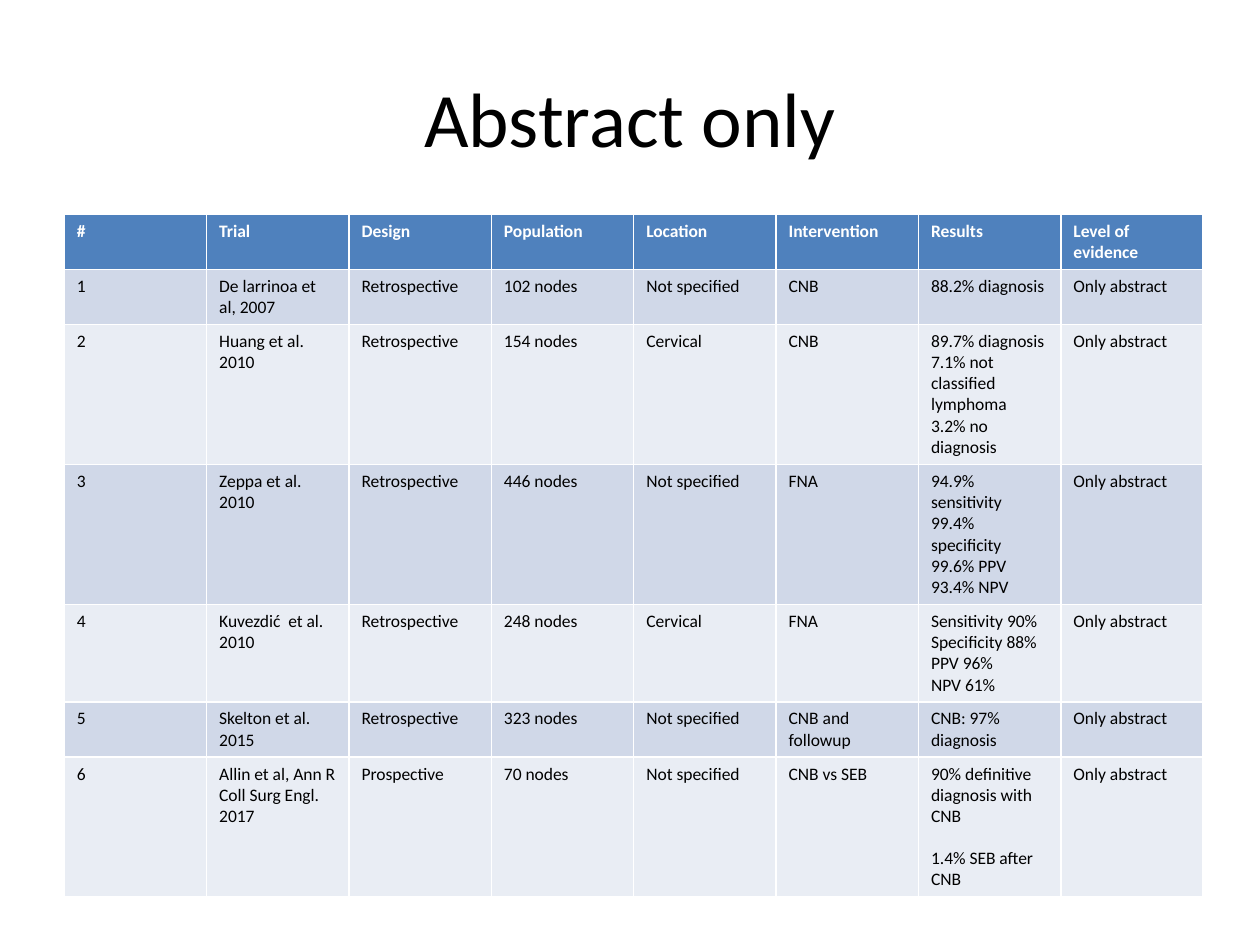
import pptx
import pptx.dml.color
import pptx.enum.text
import pptx.util

Inches = pptx.util.Inches
Pt = pptx.util.Pt
RGBColor = pptx.dml.color.RGBColor

FONT = "Calibri"
BLACK = RGBColor(0x00, 0x00, 0x00)
WHITE = RGBColor(0xFF, 0xFF, 0xFF)
HEADER_BLUE = RGBColor(0x4F, 0x81, 0xBD)
BANDS = (RGBColor(0xD0, 0xD8, 0xE8), RGBColor(0xE9, 0xED, 0xF4))

SLIDE_WIDTH, SLIDE_HEIGHT = Inches(10), Inches(7.5)
COLUMN_WIDTH, ROW_HEIGHT = Inches(1.13), Inches(0.41)
RESULTS_COLUMN = 6

HEADINGS = ("#", "Trial", "Design", "Population", "Location",
            "Intervention", "Results", "Level of evidence")
# Trial, design, population, location, intervention, results
TRIALS = (
    ("De larrinoa et al, 2007", "Retrospective", "102 nodes",
     "Not specified", "CNB", "88.2% diagnosis"),
    ("Huang et al.\n2010", "Retrospective", "154 nodes", "Cervical", "CNB",
     "89.7% diagnosis\n7.1% not classified lymphoma\n3.2% no diagnosis"),
    ("Zeppa et al.\n2010", "Retrospective", "446 nodes", "Not specified", "FNA",
     "94.9% sensitivity\n99.4% specificity 99.6% PPV\n93.4% NPV"),
    ("Kuvezdić  et al.\n2010", "Retrospective", "248 nodes", "Cervical", "FNA",
     "Sensitivity 90%\nSpecificity 88%\nPPV 96%\nNPV 61%"),
    ("Skelton et al.\n2015", "Retrospective", "323 nodes", "Not specified",
     "CNB and followup", "CNB: 97% diagnosis"),
    ("Allin et al, Ann R Coll Surg Engl. 2017", "Prospective", "70 nodes",
     "Not specified", "CNB vs SEB",
     "90% definitive diagnosis with CNB\n1.4% SEB after CNB"),
)
EVIDENCE = "Only abstract"


def format_text(frame, size, color, bold=False):
    for paragraph in frame.paragraphs:
        for run in paragraph.runs:
            run.font.name = FONT
            run.font.size = Pt(size)
            run.font.bold = bold
            run.font.color.rgb = color


def set_title(slide, wording):
    title = slide.shapes.title
    title.left, title.top = int(SLIDE_WIDTH * 0.05), int(SLIDE_HEIGHT * 0.04)
    title.width, title.height = int(SLIDE_WIDTH * 0.9), Inches(1.25)
    title.text_frame.text = wording
    title.text_frame.vertical_anchor = pptx.enum.text.MSO_ANCHOR.MIDDLE
    title.text_frame.paragraphs[0].alignment = pptx.enum.text.PP_ALIGN.CENTER
    format_text(title.text_frame, 44, BLACK)


def fill_row(table, row, wordings, fill, color, bold=False):
    for column, wording in enumerate(wordings):
        cell = table.cell(row, column)
        cell.text_frame.text = wording
        format_text(cell.text_frame, 10, color, bold)
        cell.fill.solid()
        cell.fill.fore_color.rgb = fill


def add_trials_table(slide):
    rows, columns = len(TRIALS) + 1, len(HEADINGS)
    table = slide.shapes.add_table(
        rows, columns, Inches(0.51), Inches(1.7),
        COLUMN_WIDTH * columns, ROW_HEIGHT * rows).table
    for column in table.columns:
        column.width = COLUMN_WIDTH
    for row in table.rows:
        row.height = ROW_HEIGHT

    fill_row(table, 0, HEADINGS, HEADER_BLUE, WHITE, bold=True)
    for number, trial in enumerate(TRIALS, start=1):
        band = BANDS[(number - 1) % len(BANDS)]
        fill_row(table, number, (str(number), *trial, EVIDENCE), band, BLACK)

    last_results = table.cell(len(TRIALS), RESULTS_COLUMN).text_frame
    last_results.paragraphs[-1].space_before = Pt(12)


def main():
    deck = pptx.Presentation()
    deck.slide_width, deck.slide_height = SLIDE_WIDTH, SLIDE_HEIGHT
    slide = deck.slides.add_slide(deck.slide_layouts.get_by_name("Title Only"))
    set_title(slide, "Abstract only")
    add_trials_table(slide)
    deck.save("out.pptx")


if __name__ == "__main__":
    main()
